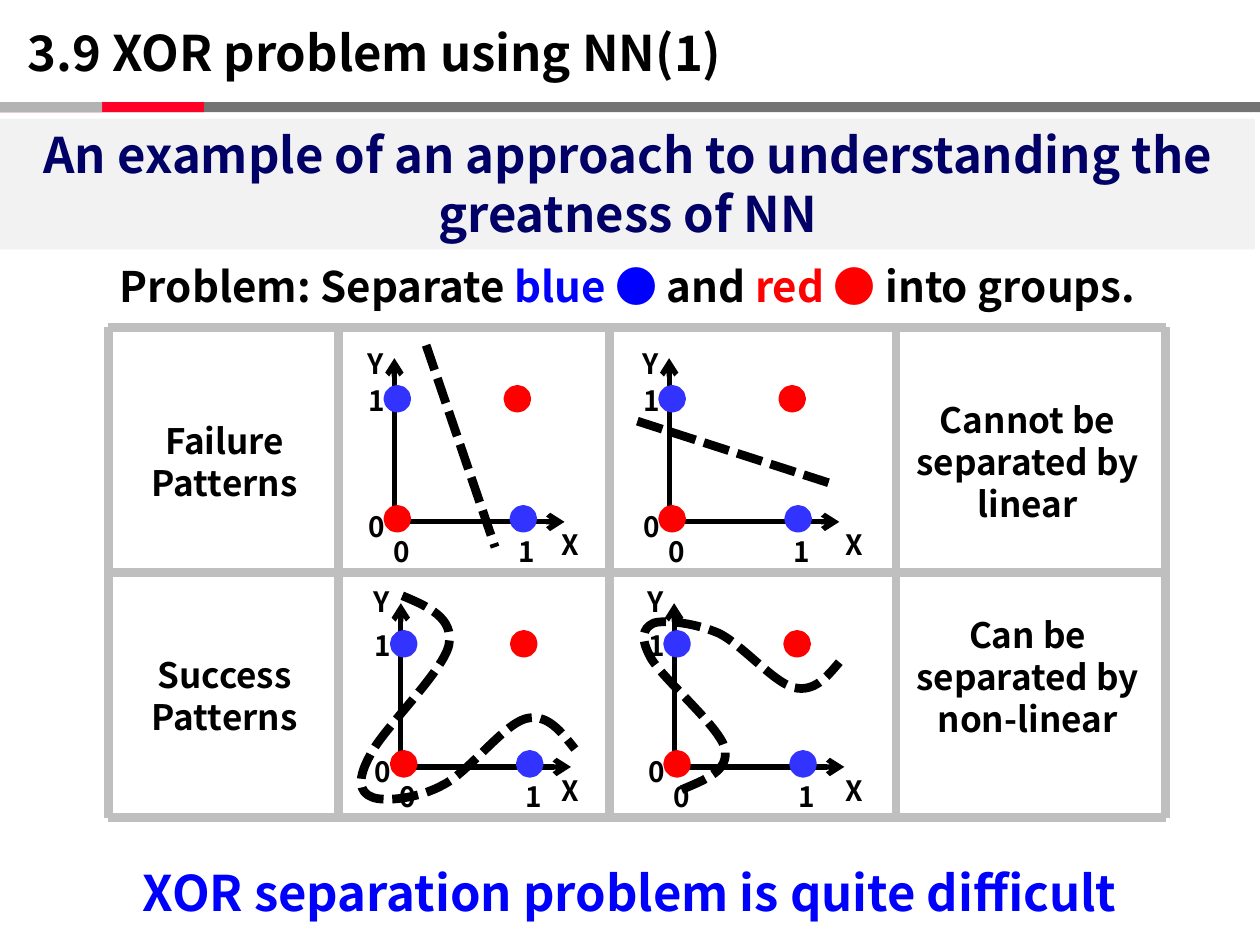
import pptx
import pptx.dml.color
import pptx.enum.dml
import pptx.enum.shapes
import pptx.enum.text
import pptx.oxml.ns
import pptx.util
from lxml import etree

Cm = pptx.util.Cm
SHAPES = pptx.enum.shapes.MSO_SHAPE
ALIGN = pptx.enum.text.PP_ALIGN
FONT = "Noto Sans CJK JP"
COLORS = {
    "black": "000000", "navy": "000066", "blue": "0000FF", "red": "FF0000",
    "dot blue": "3333FF", "grid": "BFBFBF", "band": "F2F2F2",
    "bar": "737373", "bar red": "FF0026", "bar light": "B3B3B3",
}

COLUMNS = [2.18, 6.83, 12.29, 18.06, 23.5]
ROWS = [6.6, 11.54, 16.48]

# Separators, relative to the origin of their plot
STEEP_LINE = [(0.64, -3.56), (2.03, 0.51)]
FLAT_LINE = [(-0.64, -2.03), (3.3, -0.76)]
LOWER_CURVE = [
    (0.03, -3.45), (0.56, -3.23), (1.07, -3), (0.97, -2.46),
    (0.86, -1.93), (-0.36, -0.76), (-0.61, -0.25),
    (-0.89, 0.25), (-0.84, 0.51), (-0.58, 0.61),
    (-0.33, 0.71), (0.36, 0.64), (0.86, 0.36),
    (1.37, 0.1), (2.06, -0.84), (2.51, -0.97),
    (2.95, -1.09), (3.23, -0.71), (3.51, -0.36),
]
UPPER_CURVE = [
    (0.15, 0.46), (0.64, 0.25), (1.12, 0.08), (1.02, -0.38),
    (0.91, -0.81), (-0.2, -1.75), (-0.46, -2.18),
    (-0.69, -2.59), (-0.64, -2.79), (-0.41, -2.9),
    (-0.18, -2.97), (0.43, -2.9), (0.91, -2.69),
    (1.37, -2.46), (2.01, -1.7), (2.41, -1.6),
    (2.82, -1.5), (3.07, -1.8), (3.33, -2.11),
]


def rgb(name):
    return pptx.dml.color.RGBColor.from_string(COLORS[name])


def write(shape, pieces, size, align=ALIGN.LEFT, wrap=True):
    """Fill a shape with one paragraph made of (text, color) pieces."""
    frame = shape.text_frame
    frame.word_wrap = wrap
    frame.auto_size = pptx.enum.text.MSO_AUTO_SIZE.NONE
    frame.vertical_anchor = pptx.enum.text.MSO_ANCHOR.TOP
    paragraph = frame.paragraphs[0]
    paragraph.alignment = align
    paragraph.line_spacing = pptx.util.Pt(size * 1.2)
    for text, color in pieces:
        run = paragraph.add_run()
        run.text = text
        run.font.name = FONT
        run.font.size = pptx.util.Pt(size)
        run.font.bold = True
        run.font.color.rgb = rgb(color)
        east_asian = etree.SubElement(run.font._element, pptx.oxml.ns.qn("a:ea"))
        east_asian.set("typeface", FONT)


def add_text(slide, box, pieces, size, align=ALIGN.CENTER):
    write(slide.shapes.add_textbox(*map(Cm, box)), pieces, size, align)


def add_solid(slide, kind, box, color, line_width=0):
    shape = slide.shapes.add_shape(kind, *map(Cm, box))
    shape.shadow.inherit = False
    shape.fill.solid()
    shape.fill.fore_color.rgb = rgb(color)
    if line_width:
        shape.line.color.rgb = rgb(color)
        shape.line.width = pptx.util.Pt(line_width)
    else:
        shape.line.fill.background()
    return shape


def add_line(slide, start, end, color, width, dashed=False, arrow=False):
    line = slide.shapes.add_connector(
        pptx.enum.shapes.MSO_CONNECTOR.STRAIGHT, *map(Cm, (*start, *end)))
    style_line(line, color, width, dashed)
    etree.SubElement(line._element.spPr, pptx.oxml.ns.qn("a:effectLst"))
    if arrow:
        tail = etree.SubElement(line.line._get_or_add_ln(), pptx.oxml.ns.qn("a:tailEnd"))
        tail.set("type", "arrow")


def style_line(shape, color, width, dashed):
    shape.line.color.rgb = rgb(color)
    shape.line.width = pptx.util.Pt(width)
    if dashed:
        shape.line.dash_style = pptx.enum.dml.MSO_LINE.SQUARE_DOT


def add_curve(slide, points):
    """Draw a dashed Bezier curve: a start, then two controls and an end per piece."""
    points = [(Cm(x), Cm(y)) for x, y in points]
    builder = slide.shapes.build_freeform(*points[0])
    builder.add_line_segments(points[1:], close=False)
    curve = builder.convert_to_shape()
    curve.shadow.inherit = False
    curve.fill.background()
    style_line(curve, "black", 5, True)
    qn = pptx.oxml.ns.qn
    outline = next(curve._element.iter(qn("a:path")))
    segments = outline.findall(qn("a:lnTo"))
    for first in range(0, len(segments), 3):
        bezier = etree.SubElement(outline, qn("a:cubicBezTo"))
        for segment in segments[first:first + 3]:
            bezier.append(segment[0])
            outline.remove(segment)


def add_header(slide, left, top, width):
    # Title and tricolor rule
    title = slide.shapes.title
    title.left, title.top, title.width, title.height = map(
        Cm, (left + 0.3, top + 0.33, 16.31, 1.45))
    write(title, [("3.9 XOR problem using NN(1)", "black")], 28, wrap=False)
    for bar_width, color in ((width, "bar"), (4.11, "bar red"), (2.06, "bar light")):
        add_solid(slide, SHAPES.RECTANGLE, (left, top + 2.06, bar_width, 0.2), color)


def add_introduction(slide, left, top, width):
    # Headline band and problem statement
    band = add_solid(slide, SHAPES.RECTANGLE, (left, top, width, 2.64), "band")
    write(band, [("An example of an approach to understanding the greatness of NN",
                  "navy")], 28, ALIGN.CENTER)
    add_text(slide, (left, top + 2.74, width, 1.27),
             [("Problem: Separate ", "black"), ("blue ●", "blue"), (" and ", "black"),
              ("red ●", "red"), (" into groups.", "black")], 24)


def add_plot(slide, left, top, origin_x, x_label, y_label, separator):
    x, y = left + origin_x, top + 3.92
    # Axes
    for end in ((x + 3.43, y), (x, y - 3.3)):
        add_line(slide, (x, y), end, "black", 3, arrow=True)
    # Axis labels
    labels = (("0", x - 0.27, y + 0.13), ("1", x + 2.26, y + 0.13),
              ("0", x - 0.77, y - 0.38), ("1", x - 0.77, y - 2.92),
              ("Y", x - 0.79, top + y_label), ("X", left + x_label, y))
    for text, label_left, label_top in labels:
        add_text(slide, (label_left, label_top, 0.76, 0.94),
                 [(text, "black")], 16, ALIGN.LEFT)
    # XOR points
    size = 0.38
    for dx, dy, color in ((0.06, -0.06, "red"), (2.48, -2.48, "red"),
                          (0.06, -2.48, "dot blue"), (2.6, -0.06, "dot blue")):
        add_solid(slide, SHAPES.OVAL,
                  (x + dx - size / 2, y + dy - size / 2, size, size), color, 5)
    # Separator
    points = [(x + dx, y + dy) for dx, dy in separator]
    if len(points) == 2:
        add_line(slide, *points, "black", 5, dashed=True)
    else:
        add_curve(slide, points)


def add_grid(slide, columns, rows):
    for y in rows:
        add_line(slide, (columns[0], y), (columns[-1], y), "grid", 5)
    for x in columns:
        add_line(slide, (x, rows[0]), (x, rows[-1]), "grid", 5)


def add_pattern_row(slide, top, name, name_top, verdict, verdict_top, y_label, plots):
    for column, x_label, (origin_x, separator) in zip(COLUMNS[1:3], (4.24, 4.5), plots):
        add_plot(slide, column, top, origin_x, x_label, y_label, separator)
    add_text(slide, (COLUMNS[0], top + name_top, 4.7, 1.96), [(name, "black")], 20)
    add_text(slide, (COLUMNS[3] + 0.05, top + verdict_top, 5.21, 2.82),
             [(verdict, "black")], 20)


def main():
    presentation = pptx.Presentation()
    presentation.slide_width, presentation.slide_height = Cm(25.4), Cm(19.05)
    slide = presentation.slides.add_slide(presentation.slide_layouts[5])
    add_header(slide, 0, 0, 25.4)
    add_introduction(slide, 0, 2.39, 25.3)
    add_pattern_row(slide, ROWS[0], "Failure Patterns", 1.73,
                    "Cannot be separated by linear", 1.3, 0.26,
                    [(1.12, STEEP_LINE), (1.2, FLAT_LINE)])
    add_pattern_row(slide, ROWS[1], "Success Patterns", 1.5,
                    "Can be separated by non-linear", 0.71, 0.12,
                    [(1.25, LOWER_CURVE), (1.3, UPPER_CURVE)])
    add_grid(slide, COLUMNS, ROWS)
    # Conclusion
    add_text(slide, (0.08, 17.27, 25.22, 1.45),
             [("XOR separation problem is quite difficult", "blue")], 28)
    presentation.save("out.pptx")


if __name__ == "__main__":
    main()
